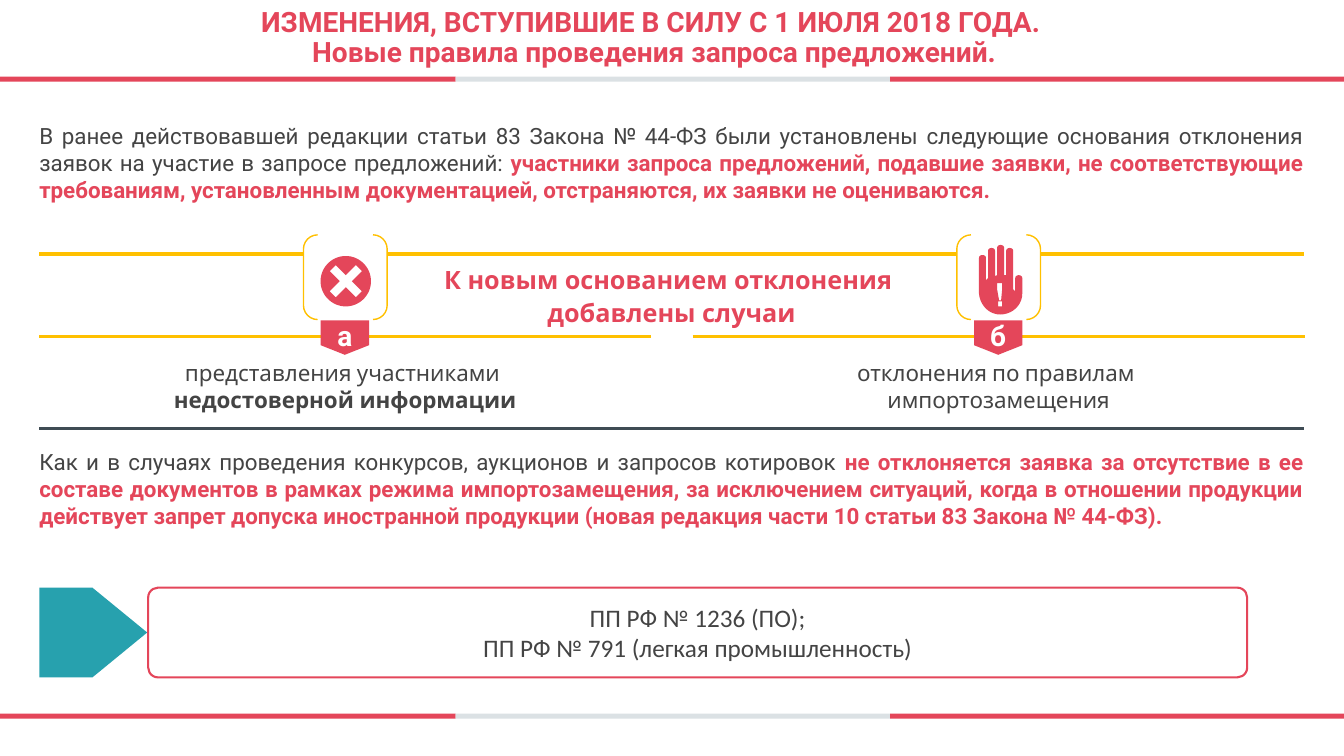
import pptx
import pptx.dml.color
import pptx.enum.shapes
import pptx.enum.text
import pptx.util
import lxml.etree
import math

SLIDE_W, SLIDE_H = 13.33, 7.5
MARGIN = 0.39
CONTENT_W = 12.54
COLUMN_W, COLUMN_STEP = 6.07, 6.48
RED, YELLOW, TEAL = "E4465A", "FFC000", "27A1AE"
TEXT, SLATE, PALE, WHITE = "444444", "3F4C54", "DBE1E4", "FFFFFF"
SHAPES = pptx.enum.shapes.MSO_SHAPE
ALIGN = pptx.enum.text.PP_ALIGN
ANCHOR = pptx.enum.text.MSO_ANCHOR
inch = pptx.util.Inches


def color(hex_code):
    """Turn a hex string into a colour."""
    return pptx.dml.color.RGBColor.from_string(hex_code)


def paint(shape, fill=None, line=None, weight=1):
    """Set fill and outline, and drop the shadow."""
    shape.shadow.inherit = False
    if fill:
        shape.fill.solid()
        shape.fill.fore_color.rgb = color(fill)
    else:
        shape.fill.background()
    if line:
        shape.line.color.rgb = color(line)
        shape.line.width = pptx.util.Pt(weight)
    else:
        shape.line.fill.background()
    return shape


def add_preset(slide, kind, box, adjust=None, **style):
    """Place a painted preset shape in a box."""
    shape = slide.shapes.add_shape(kind, *map(inch, box))
    if adjust is not None:
        shape.adjustments[0] = adjust
    return paint(shape, **style)


def add_rule(slide, left, top, width, hex_code):
    """Draw a horizontal rule."""
    rule = slide.shapes.add_connector(
        pptx.enum.shapes.MSO_CONNECTOR.STRAIGHT,
        inch(left), inch(top), inch(left + width), inch(top))
    rule.line.color.rgb = color(hex_code)
    rule.line.width = pptx.util.Pt(2.25)
    effects = pptx.oxml.ns.qn("a:effectLst")
    lxml.etree.SubElement(rule.element.spPr, effects)


def write(shape, paragraphs, size, font, align=ALIGN.CENTER, anchor=ANCHOR.TOP,
          inset=0, spacing=None):
    """Fill a shape with paragraphs of (text, colour, bold) runs."""
    frame = shape.text_frame
    frame.word_wrap = True
    frame.vertical_anchor = anchor
    frame.margin_left = frame.margin_right = inch(inset)
    frame.margin_top = frame.margin_bottom = inch(inset / 2)
    for index, runs in enumerate(paragraphs):
        paragraph = frame.add_paragraph() if index else frame.paragraphs[0]
        paragraph.alignment = align
        if spacing:
            paragraph.line_spacing = spacing
        for words, hex_code, bold in runs:
            for row, piece in enumerate(words.split("\n")):
                if row:
                    paragraph.add_line_break()
                run = paragraph.add_run()
                run.text = piece
                run.font.size = pptx.util.Pt(size)
                run.font.name = font
                run.font.bold = bold
                run.font.color.rgb = color(hex_code)


def add_text(slide, box, runs, size, font, **layout):
    """Place a one-paragraph text box."""
    write(slide.shapes.add_textbox(*map(inch, box)), [runs], size, font, **layout)


def curve(start, first, second, end, steps=10):
    """List the points of a cubic curve after its start."""
    points = []
    for step in range(1, steps + 1):
        t = step / steps
        weights = ((1 - t) ** 3, 3 * t * (1 - t) ** 2, 3 * t * t * (1 - t), t ** 3)
        points.append(tuple(
            sum(w * p[axis] for w, p in zip(weights, (start, first, second, end)))
            for axis in (0, 1)))
    return points


def add_outline(slide, left, top, contours):
    """Build a red icon whose inner contours are holes."""
    scaled = [[(inch(left + x), inch(top + y)) for x, y in contour]
              for contour in contours]
    builder = slide.shapes.build_freeform(*scaled[0][0])
    for index, contour in enumerate(scaled):
        if index:
            builder.move_to(*contour[0])
        builder.add_line_segments(contour[1:], close=True)
    paint(builder.convert_to_shape(), fill=RED)


def add_cross(slide, left, top):
    """Draw a disc with a cross cut out, 0.5 by 0.5 inch."""
    radius = 0.25
    angles = [math.tau * step / 60 for step in range(60)]
    disc = [(radius * math.cos(a), radius * math.sin(a)) for a in angles]
    arm, cross = [(0.06, 0), (0.16, 0.1), (0.1, 0.16)], []
    for _ in range(4):
        cross += arm
        arm = [(-y, x) for x, y in arm]
    add_outline(slide, left + radius, top + radius, [disc, cross])


def add_hand(slide, left, top):
    """Draw a raised hand with an exclamation mark cut out, 0.43 by 0.7 inch."""
    fingers = [(0.36, 0.34, 0.47, 0.49), (0.27, 0.07, 0.31, 0.45),
               (0.18, 0.04, 0.31, 0.31), (0.09, 0.07, 0.34, 0.32),
               (0, 0.14, 0.49, 0.36)]
    width, bend = 0.07, 0.04
    hand = []
    for x, tip, left_base, right_base in fingers:
        right = x + width
        hand += [(right, right_base), (right, tip)]
        hand += curve((right, tip), (right, tip - bend), (x, tip - bend), (x, tip))
        hand.append((x, left_base))
    hand += curve((0, 0.49), (0.01, 0.61), (0.1, 0.7), (0.21, 0.7))
    hand += curve((0.21, 0.7), (0.33, 0.7), (0.43, 0.61), (0.43, 0.49))
    dot = [(0.19, 0.57), (0.23, 0.57), (0.23, 0.62), (0.19, 0.62)]
    stroke = [(0.18, 0.39), (0.23, 0.39), (0.23, 0.45), (0.22, 0.56),
              (0.2, 0.56), (0.18, 0.45)]
    add_outline(slide, left, top, [hand, dot, stroke])


def add_band(slide, top):
    """Draw a three-part band across the slide."""
    stops = [0, 4.52, 8.83, SLIDE_W]
    for start, end, fill in zip(stops, stops[1:], (RED, PALE, RED)):
        add_preset(slide, SHAPES.RECTANGLE, (start, top, end - start, 0.05), fill=fill)


def add_reason(slide, left, top, letter, runs, add_icon, icon_at):
    """Draw one column: bracketed icon, lettered flag, rule and caption."""
    tile = left + 2.62
    add_preset(slide, SHAPES.ROUNDED_RECTANGLE, (tile, top + 0.01, 0.83, 0.82), fill=WHITE)
    for offset, angle in ((0, 180), (0.69, 0)):
        bracket = add_preset(slide, SHAPES.RIGHT_BRACKET,
                             (tile + offset, top, 0.14, 0.84), 1, line=YELLOW)
        bracket.rotation = angle
    add_rule(slide, left, top + 1.01, COLUMN_W, YELLOW)
    add_icon(slide, left + icon_at[0], top + icon_at[1])
    flag = add_preset(slide, SHAPES.PENTAGON,
                      (left + 2.86, top + 0.78, 0.34, 0.48), 0.28, fill=RED)
    flag.rotation = 90
    write(flag, [[(letter, WHITE, True)]], 20, "Roboto", anchor=ANCHOR.MIDDLE)
    flag.text_frame._txBody.bodyPr.set("vert", "vert270")
    add_text(slide, (left, top + 1.23, COLUMN_W, 0.54), runs, 16, "Karla")


def add_decrees(slide, left, top, height):
    """Draw the arrow and the framed list of decrees."""
    add_preset(slide, SHAPES.PENTAGON, (left, top, 1.07, height), 0.61, fill=TEAL)
    frame = add_preset(slide, SHAPES.ROUNDED_RECTANGLE, (left + 1.08, top, 10.9, height),
                       0.11, fill=WHITE, line=RED, weight=1.5)
    decrees = ("ПП РФ № 1236 (ПО);", "ПП РФ № 791 (легкая промышленность)")
    write(frame, [[(decree, TEXT, False)] for decree in decrees], 18, "Calibri",
          anchor=ANCHOR.MIDDLE, inset=0.1)


def build_slide(slide):
    """Lay out the slide from top to bottom."""
    for top in (0.76, 7.08):
        add_band(slide, top)
    add_text(slide, (1.97, 0, 9.04, 0.76), [(
        "ИЗМЕНЕНИЯ, ВСТУПИВШИЕ В СИЛУ С 1 ИЮЛЯ 2018 ГОДА. \n"
        "Новые правила проведения запроса предложений.", RED, True)],
        20, "Roboto", anchor=ANCHOR.MIDDLE, inset=0.1, spacing=0.9)
    add_text(slide, (MARGIN, 1.21, CONTENT_W, 0.81), [
        ("В ранее действовавшей редакции статьи 83 Закона № 44-ФЗ были установлены "
         "следующие основания отклонения заявок на участие в запросе предложений: ",
         TEXT, False),
        ("участники запроса предложений, подавшие заявки, не соответствующие требованиям, "
         "установленным документацией, отстраняются, их заявки не оцениваются.", RED, True)],
        16, "Roboto", align=ALIGN.JUSTIFY)
    add_rule(slide, MARGIN, 2.52, CONTENT_W, YELLOW)
    add_reason(slide, MARGIN, 2.33, "а", [
        ("представления участниками \n", TEXT, False),
        ("недостоверной информации", TEXT, True)], add_cross, (2.79, 0.21))
    add_reason(slide, MARGIN + COLUMN_STEP, 2.33, "б", [
        ("отклонения по правилам \nимпортозамещения", TEXT, False)], add_hand, (2.84, 0.09))
    add_text(slide, (MARGIN, 2.59, CONTENT_W, 0.71), [
        ("К новым основанием отклонения \nдобавлены случаи", RED, True)],
        18, "Karla", spacing=1.1)
    add_rule(slide, MARGIN, 4.25, CONTENT_W, SLATE)
    add_text(slide, (MARGIN, 4.45, CONTENT_W, 1.08), [
        ("Как и в случаях проведения конкурсов, аукционов и запросов котировок ", TEXT, False),
        ("не отклоняется заявка за отсутствие в ее составе документов в рамках режима "
         "импортозамещения, за исключением ситуаций, когда в отношении продукции действует "
         "запрет допуска иностранной продукции (новая редакция части 10 статьи 83 Закона "
         "№ 44-ФЗ).", RED, True)], 16, "Roboto", align=ALIGN.JUSTIFY)
    add_decrees(slide, MARGIN, 5.83, 0.89)


def main():
    """Create and save the presentation."""
    deck = pptx.Presentation()
    deck.slide_width, deck.slide_height = inch(SLIDE_W), inch(SLIDE_H)
    build_slide(deck.slides.add_slide(deck.slide_layouts[6]))
    deck.save("out.pptx")


if __name__ == "__main__":
    main()
